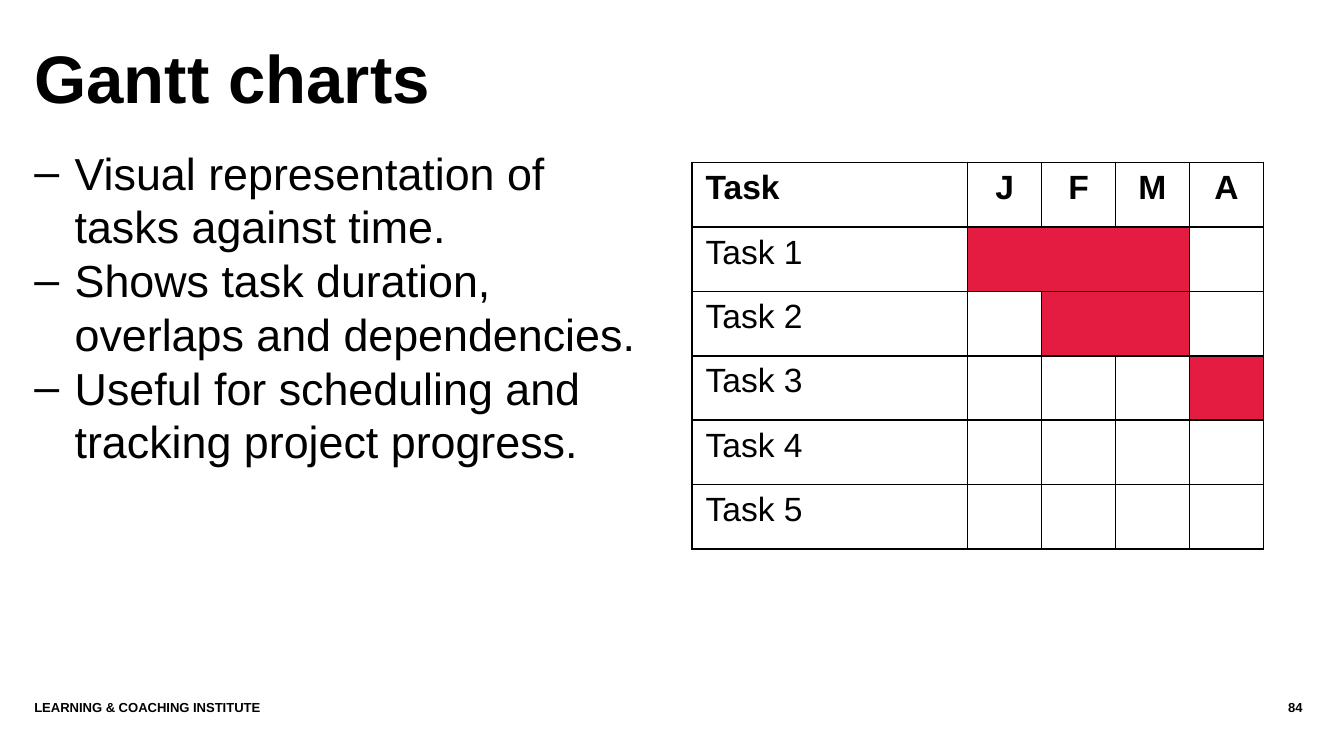
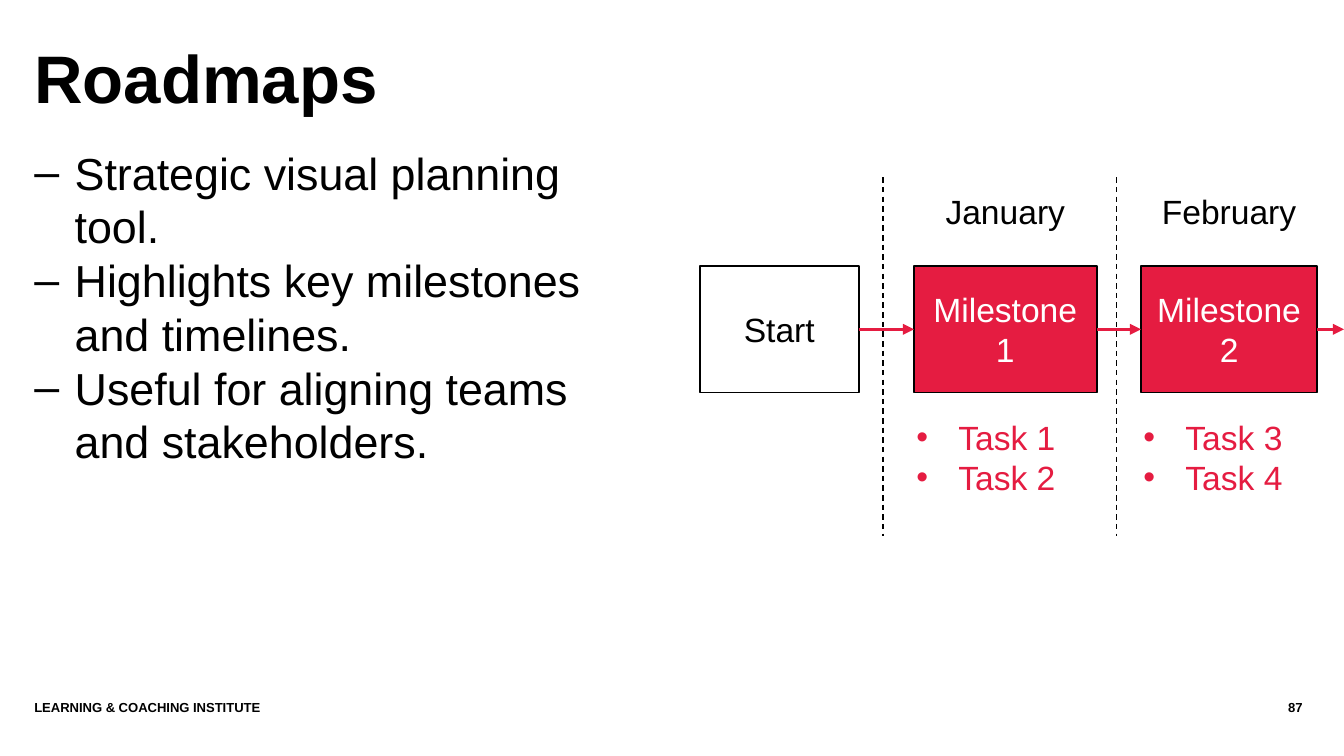
from lxml.etree import SubElement
from pptx import Presentation
from pptx.dml.color import RGBColor
from pptx.enum.dml import MSO_LINE
from pptx.enum.shapes import MSO_CONNECTOR, MSO_SHAPE
from pptx.enum.text import MSO_ANCHOR, PP_ALIGN
from pptx.oxml.ns import qn
from pptx.util import Pt

# Content
GANTT = {
    "title": "Gantt charts",
    "page": "84",
    "points": [
        "Visual representation of tasks against time.",
        "Shows task duration, overlaps and dependencies.",
        "Useful for scheduling and tracking project progress.",
    ],
}
MONTHS = ["J", "F", "M", "A"]
# Task name, months in which it runs
TASKS = [
    ("Task 1", "JFM"),
    ("Task 2", "FM"),
    ("Task 3", "A"),
    ("Task 4", ""),
    ("Task 5", ""),
]

ROADMAP = {
    "title": "Roadmaps",
    "page": "87",
    "points": [
        "Strategic visual planning tool.",
        "Highlights key milestones and timelines.",
        "Useful for aligning teams and stakeholders.",
    ],
}
# Month, milestone, tasks, left, width, divider
STAGES = [
    ("January", "Milestone 1", ["Task 1", "Task 2"], 489.6, 97.9, 473),
    ("February", "Milestone 2", ["Task 3", "Task 4"], 611.3, 94.3, 598.3),
]
FOOTER = "LEARNING & COACHING INSTITUTE"

# Shared style
FONT = "Arial"
BLACK, WHITE, RED = "000000", "FFFFFF", "E51C41"
LEFT, CENTRE, RIGHT = PP_ALIGN.LEFT, PP_ALIGN.CENTER, PP_ALIGN.RIGHT
WIDE, HIGH = 720, 405
LEAD = 1.2  # line pitch as a multiple of text size


def rgb(code):
    return RGBColor.from_string(code)


def write(para, text, size, color=BLACK, bold=False, align=LEFT):
    para.alignment = align
    run = para.add_run()
    run.text = text
    font = run.font
    font.name, font.size, font.bold = FONT, Pt(size), bold
    font.color.rgb = rgb(color)


def mark(para, sign, indent):
    props = para._p.get_or_add_pPr()
    props.set("marL", str(Pt(indent)))
    props.set("indent", str(-Pt(indent)))
    SubElement(props, qn("a:buFont"), typeface=FONT)
    SubElement(props, qn("a:buChar"), char=sign)


def fill_text(frame, lines, size, sign=None, indent=0, **look):
    frame.word_wrap = True
    for i, line in enumerate(lines):
        para = frame.paragraphs[0] if i == 0 else frame.add_paragraph()
        para.line_spacing = Pt(size * LEAD)
        write(para, line, size, **look)
        if sign:
            mark(para, sign, indent)


def add_text(slide, box, lines, size, inset=True, **look):
    frame = slide.shapes.add_textbox(*map(Pt, box)).text_frame
    if not inset:
        frame.margin_left = frame.margin_right = 0
        frame.margin_top = frame.margin_bottom = 0
    fill_text(frame, lines, size, **look)


def add_box(slide, box, text, back, color):
    shape = slide.shapes.add_shape(MSO_SHAPE.RECTANGLE, *map(Pt, box))
    shape.shadow.inherit = False
    shape.fill.solid()
    shape.fill.fore_color.rgb = rgb(back)
    shape.line.color.rgb = rgb(BLACK)
    shape.line.width = Pt(1)
    shape.text_frame.vertical_anchor = MSO_ANCHOR.MIDDLE
    fill_text(shape.text_frame, [text], 18, color=color, align=CENTRE)
    return shape


def add_line(slide, ends, color, width):
    line = slide.shapes.add_connector(MSO_CONNECTOR.STRAIGHT, *map(Pt, ends))
    line.line.color.rgb = rgb(color)
    line.line.width = Pt(width)
    SubElement(line._element.spPr, qn("a:effectLst"))
    return line


def add_arrow(slide, ends):
    line = add_line(slide, ends, RED, 1.5)
    SubElement(line.line._get_or_add_ln(), qn("a:tailEnd"), type="triangle")
    return line


def set_edge(cell, side, shown):
    edge = SubElement(cell._tc.get_or_add_tcPr(), qn("a:ln" + side), w=str(Pt(1)))
    if shown:
        paint = SubElement(edge, qn("a:solidFill"))
        SubElement(paint, qn("a:srgbClr"), val=BLACK)
    else:
        SubElement(edge, qn("a:noFill"))


def add_page(deck, data):
    slide = deck.slides.add_slide(deck.slide_layouts[6])
    add_text(slide, (18.4, 19.4, 664.6, 54.7), [data["title"]], 36, False, bold=True)
    add_text(slide, (18.4, 77.8, 324.7, 283.7), data["points"], 24, False,
             sign="–", indent=21.6)
    add_text(slide, (18.4, 375, 605.5, 21.6), [FOOTER], 7, False, bold=True)
    add_text(slide, (626.4, 375, 71.4, 21.6), [data["page"]], 7, False,
             bold=True, align=RIGHT)
    return slide


def add_gantt(slide):
    name, month, row = 147.6, 39.6, 34.5
    rows, cols = len(TASKS) + 1, len(MONTHS) + 1
    box = (370.8, 87.1, name + month * len(MONTHS), row * rows)
    table = slide.shapes.add_table(rows, cols, *map(Pt, box)).table
    table.first_row = table.horz_banding = False
    for c, col in enumerate(table.columns):
        col.width = Pt(month if c else name)
    for r, line in enumerate(table.rows):
        line.height = Pt(row)
        label, span = TASKS[r - 1] if r else ("Task", "")
        busy = [False] + [m in span for m in MONTHS] + [False]
        for c, cell in enumerate(line.cells):
            # Months of one bar merge: no edge between them
            set_edge(cell, "L", not (busy[c] and busy[c - 1]))
            set_edge(cell, "R", not (busy[c] and busy[c + 1]))
            set_edge(cell, "T", True)
            set_edge(cell, "B", True)
            cell.fill.solid()
            cell.fill.fore_color.rgb = rgb(RED if busy[c] else WHITE)
            text = label if c == 0 else MONTHS[c - 1] if r == 0 else ""
            if text:
                write(cell.text_frame.paragraphs[0], text, 18, bold=r == 0,
                      align=CENTRE if c else LEFT)


def add_road(slide):
    top, tall = 142.6, 67.7
    mid = top + tall / 2
    last = add_box(slide, (375, top, 85, tall), "Start", WHITE, BLACK)
    for month, goal, tasks, x, wide, split in STAGES:
        rule = add_line(slide, (split, 95, split, 287.3), BLACK, 0.75)
        rule.line.dash_style = MSO_LINE.DASH
        add_text(slide, (x, 98.6, wide, 29), [month], 18, align=CENTRE)
        box = add_box(slide, (x, top, wide, tall), goal, RED, WHITE)
        add_text(slide, (x - 10.4, 219.6, 97.9, 51), tasks, 18, sign="•",
                 indent=22.5, color=RED, align=CENTRE)
        arrow = add_arrow(slide, (x, mid, x, mid))
        arrow.begin_connect(last, 3)
        arrow.end_connect(box, 1)
        last = box
    # Onward arrow to the slide edge
    onward = add_arrow(slide, (x + wide, mid, WIDE, mid))
    onward.begin_connect(last, 3)


def main():
    deck = Presentation()
    deck.slide_width, deck.slide_height = Pt(WIDE), Pt(HIGH)
    add_gantt(add_page(deck, GANTT))
    add_road(add_page(deck, ROADMAP))
    deck.save("out.pptx")


if __name__ == "__main__":
    main()
